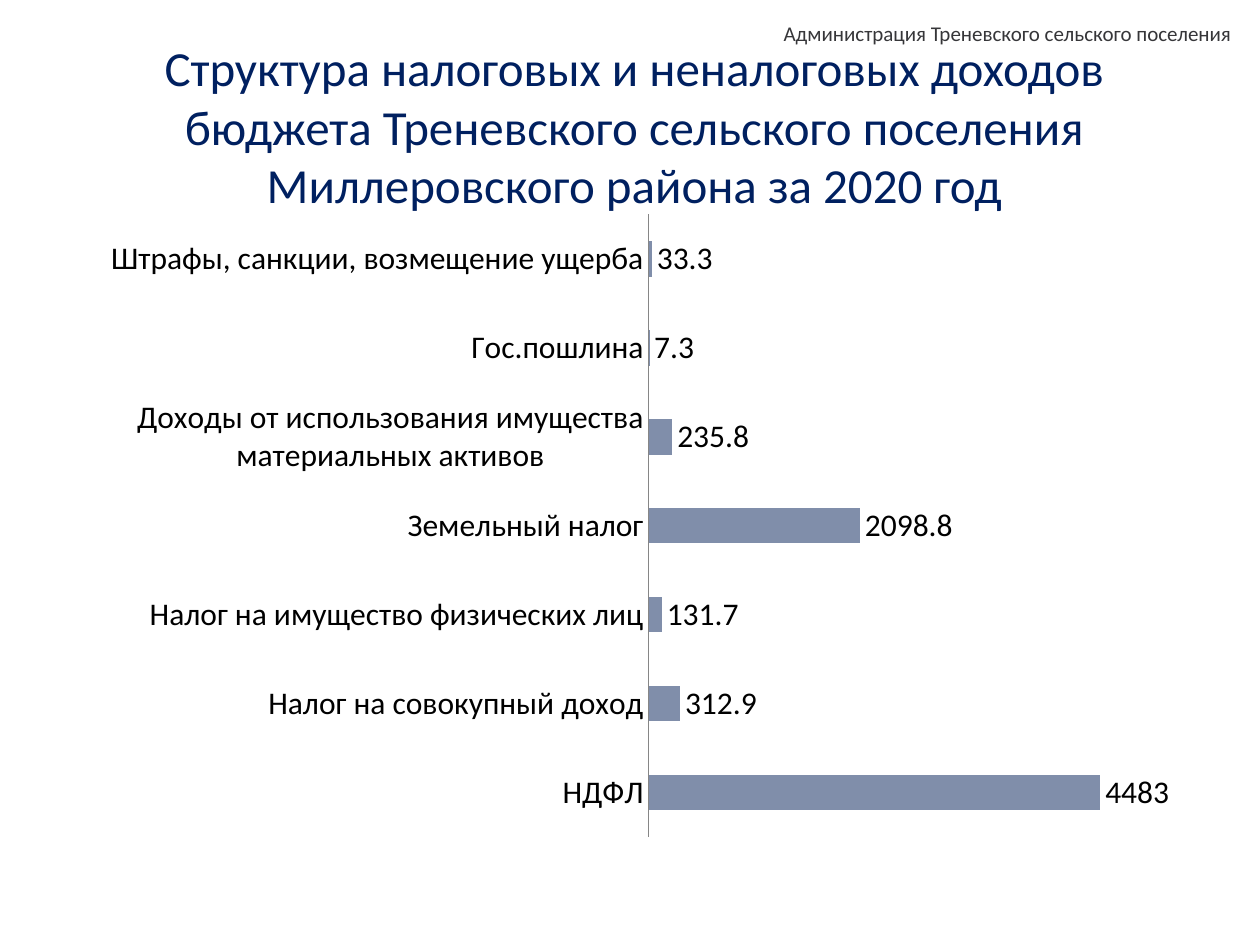
from dataclasses import dataclass

import pptx
import pptx.chart.data
import pptx.dml.color
import pptx.enum.chart
import pptx.enum.text
import pptx.util
from pptx.dml.color import RGBColor
from pptx.util import Cm

FONT = "Calibri"
NAVY = RGBColor(0x00, 0x20, 0x60)
GRAPHITE = RGBColor(0x36, 0x36, 0x39)
BLACK = RGBColor(0x00, 0x00, 0x00)
BAR_BLUE = RGBColor(0x80, 0x8E, 0xAA)
AXIS_GREY = RGBColor(0x86, 0x86, 0x86)

INCOME = {
    "НДФЛ": 4483,
    "Налог на совокупный доход": 312.9,
    "Налог на имущество физических лиц": 131.7,
    "Земельный налог": 2098.8,
    "Доходы от использования имущества материальных активов": 235.8,
    "Гос.пошлина": 7.3,
    "Штрафы, санкции, возмещение ущерба": 33.3,
}


@dataclass(frozen=True)
class Caption:
    text: str
    left: float
    top: float
    width: float
    height: float
    size: int
    color: RGBColor
    align: pptx.enum.text.PP_ALIGN


CAPTIONS = [
    Caption("Структура налоговых и неналоговых доходов бюджета Треневского "
            "сельского поселения Миллеровского района за 2020 год",
            1.9, 1.17, 21.77, 2.72, 28, NAVY, pptx.enum.text.PP_ALIGN.CENTER),
    Caption("Администрация Треневского сельского поселения",
            9, 0.36, 16.08, 0.61, 12, GRAPHITE, pptx.enum.text.PP_ALIGN.RIGHT),
]


def style_font(font: pptx.text.text.Font, size: int, color: RGBColor) -> None:
    font.name = FONT
    font.size = pptx.util.Pt(size)
    font.color.rgb = color


def add_caption(slide: pptx.slide.Slide, caption: Caption) -> None:
    box = slide.shapes.add_textbox(Cm(caption.left), Cm(caption.top),
                                   Cm(caption.width), Cm(caption.height))
    frame = box.text_frame
    frame.word_wrap = True
    frame.vertical_anchor = pptx.enum.text.MSO_ANCHOR.MIDDLE
    frame.text = caption.text
    paragraph = frame.paragraphs[0]
    paragraph.alignment = caption.align
    style_font(paragraph.runs[0].font, caption.size, caption.color)


def add_income_chart(slide: pptx.slide.Slide) -> None:
    data = pptx.chart.data.CategoryChartData()
    data.categories = list(INCOME)
    data.add_series("Series 1", list(INCOME.values()))
    chart = slide.shapes.add_chart(
        pptx.enum.chart.XL_CHART_TYPE.BAR_CLUSTERED,
        Cm(1.8), Cm(4.06), Cm(21.87), Cm(13.08), data).chart
    chart.has_legend = False
    chart.has_title = False
    style_font(chart.font, 18, BLACK)

    sources = chart.category_axis
    sources.major_tick_mark = pptx.enum.chart.XL_TICK_MARK.NONE
    sources.format.line.color.rgb = AXIS_GREY
    amounts = chart.value_axis
    amounts.visible = False
    amounts.has_major_gridlines = False
    amounts.minimum_scale = 0
    amounts.maximum_scale = 5000

    plot = chart.plots[0]
    plot.vary_by_categories = False
    plot.gap_width = 150
    plot.overlap = -25
    bars = plot.series[0].format
    bars.fill.solid()
    bars.fill.fore_color.rgb = BAR_BLUE
    plot.has_data_labels = True
    labels = plot.data_labels
    labels.show_value = True
    labels.position = pptx.enum.chart.XL_LABEL_POSITION.OUTSIDE_END
    style_font(labels.font, 18, BLACK)


def main() -> None:
    presentation = pptx.Presentation()
    presentation.slide_width = Cm(25.4)
    presentation.slide_height = Cm(19.05)
    slide = presentation.slides.add_slide(presentation.slide_layouts[6])
    for caption in CAPTIONS:
        add_caption(slide, caption)
    add_income_chart(slide)
    presentation.save("out.pptx")


if __name__ == "__main__":
    main()
